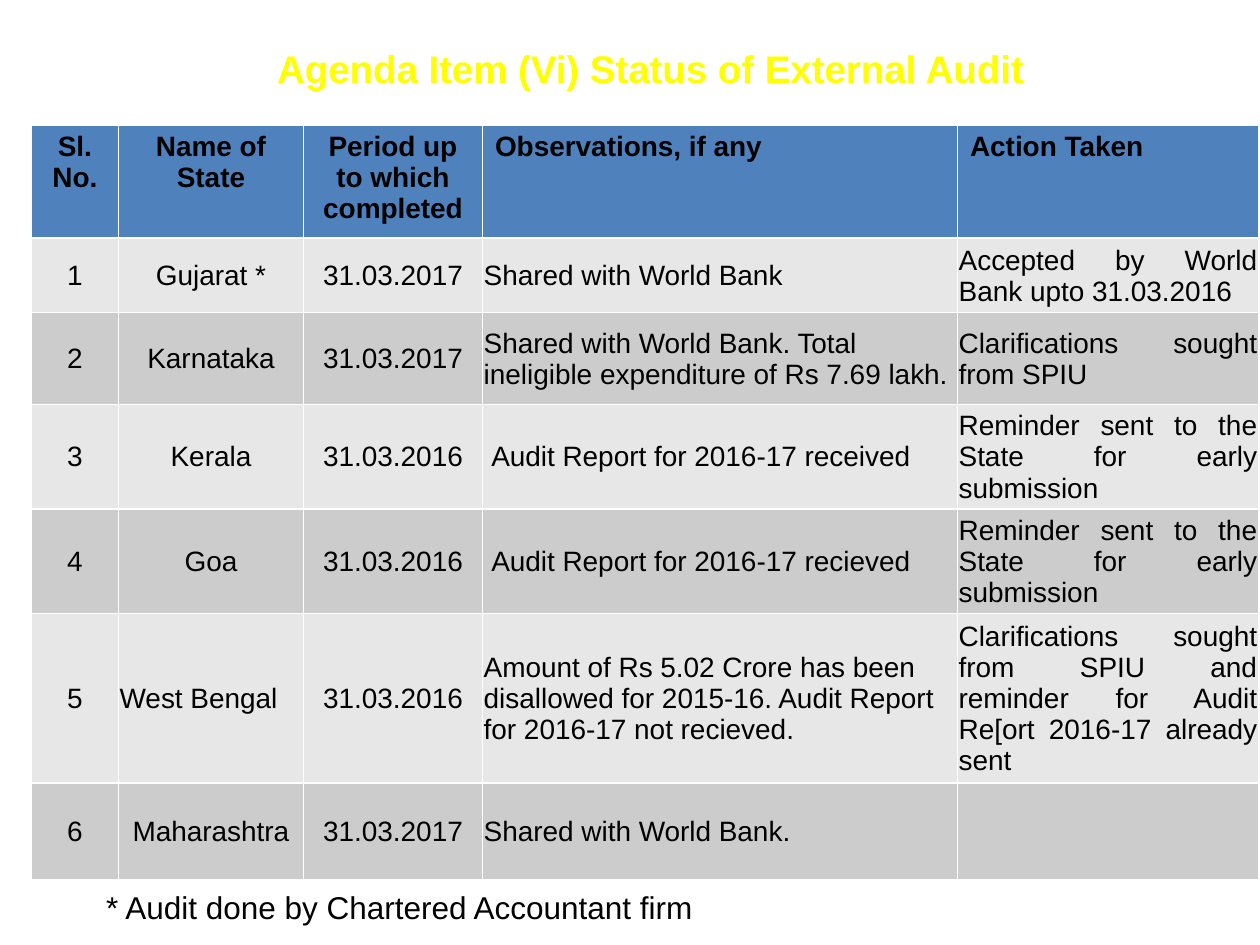
from dataclasses import dataclass

from pptx import Presentation
from pptx.dml.color import RGBColor
from pptx.enum.text import MSO_ANCHOR, PP_ALIGN
from pptx.oxml import parse_xml
from pptx.oxml.ns import nsdecls
from pptx.util import Inches, Pt

LEFT, MID, JUST = PP_ALIGN.LEFT, PP_ALIGN.CENTER, PP_ALIGN.JUSTIFY
TOP, CENTRE, BOTTOM = MSO_ANCHOR.TOP, MSO_ANCHOR.MIDDLE, MSO_ANCHOR.BOTTOM


@dataclass
class Theme:
    font: str = "Arial"
    ink: str = "000000"
    title: str = "FFFF00"
    head: str = "4F81BD"
    bands: tuple = ("E7E7E7", "CCCCCC")
    rule: str = "FFFFFF"
    big: int = 22
    note: int = 18
    body: int = 16


COLS = [0.69, 1.47, 1.42, 3.77, 2.39]
ROWS = [0.87, 0.59, 0.73, 0.83, 0.83, 1.3, 0.77]
HEADS = ["Sl. No.", "Name of State", "Period up to which completed",
         "Observations, if any", "Action Taken"]
HEAD_ALIGN = [MID, MID, MID, LEFT, LEFT]
BODY_ALIGN = [MID, MID, MID, LEFT, JUST]
REMIND = "Reminder sent to the State for early submission"
STATES = [
    ("Gujarat *", "31.03.2017", "Shared with World Bank",
     "Accepted by World Bank upto 31.03.2016"),
    ("Karnataka", "31.03.2017",
     "Shared with World Bank. Total ineligible expenditure of Rs 7.69 lakh.",
     "Clarifications sought from SPIU"),
    ("Kerala", "31.03.2016", "Audit Report for 2016-17 received", REMIND),
    ("Goa", "31.03.2016", "Audit Report for 2016-17 recieved", REMIND),
    ("West Bengal", "31.03.2016",
     "Amount of Rs 5.02 Crore has been disallowed for 2015-16. "
     "Audit Report for 2016-17 not recieved.",
     "Clarifications sought from SPIU and reminder for Audit "
     "Re[ort 2016-17 already sent"),
    ("Maharashtra", "31.03.2017", "Shared with World Bank.", ""),
]


class Deck:
    def __init__(self, theme):
        self.theme = theme
        self.show = Presentation()
        self.show.slide_width, self.show.slide_height = Inches(10), Inches(7.5)
        self.slide = self.show.slides.add_slide(self.show.slide_layouts[6])

    def label(self, frame, words, size, color, align, bold=False):
        para = frame.paragraphs[0]
        para.text = words
        para.alignment = align
        font = para.font
        font.name, font.size, font.bold = self.theme.font, Pt(size), bold
        font.color.rgb = RGBColor.from_string(color)

    def text(self, place, words, size, color, bold=False, anchor=TOP, wrap=True):
        box = self.slide.shapes.add_textbox(*map(Inches, place))
        frame = box.text_frame
        frame.word_wrap = wrap
        frame.vertical_anchor = anchor
        self.label(frame, words, size, color, MID, bold)

    def cell(self, cell, words, fill, align, bold=False):
        props = cell._tc.get_or_add_tcPr()
        for side in "LRTB":
            props.append(parse_xml(
                f'<a:ln{side} {nsdecls("a")} w="12700"><a:solidFill>'
                f'<a:srgbClr val="{self.theme.rule}"/></a:solidFill></a:ln{side}>'))
        cell.fill.solid()
        cell.fill.fore_color.rgb = RGBColor.from_string(fill)
        self.label(cell.text_frame, words, self.theme.body, self.theme.ink,
                   align, bold)

    def table(self, left, top, cols, rows, heads, states):
        shape = self.slide.shapes.add_table(
            len(rows), len(cols), Inches(left), Inches(top),
            Inches(sum(cols)), Inches(sum(rows)))
        grid = shape.table
        for col, width in zip(grid.columns, cols):
            col.width = Inches(width)
        for row, height in zip(grid.rows, rows):
            row.height = Inches(height)
        for x, words in enumerate(heads):
            self.cell(grid.cell(0, x), words, self.theme.head, HEAD_ALIGN[x], True)
        for y, state in enumerate(states, 1):
            fill = self.theme.bands[(y - 1) % 2]
            for x, words in enumerate((str(y), *state)):
                cell = grid.cell(y, x)
                align = JUST if words == "West Bengal" else BODY_ALIGN[x]
                self.cell(cell, words, fill, align)
                cell.vertical_anchor = CENTRE
                inset = 0.07 if words.startswith("Audit Report") else 0.01
                cell.margin_left = Inches(inset)
                cell.margin_right = cell.margin_top = Inches(0.01)
                cell.margin_bottom = 0


def main():
    theme = Theme()
    deck = Deck(theme)
    deck.text((0.58, 0, 9.17, 0.77), "Agenda Item (Vi) Status of External Audit",
              theme.big, theme.title, bold=True, anchor=BOTTOM)
    deck.table(0.25, 0.99, COLS, ROWS, HEADS, STATES)
    deck.text((0.72, 7, 4.9, 0.4), "* Audit done by Chartered Accountant firm",
              theme.note, theme.ink, wrap=False)
    deck.show.save("out.pptx")


if __name__ == "__main__":
    main()
